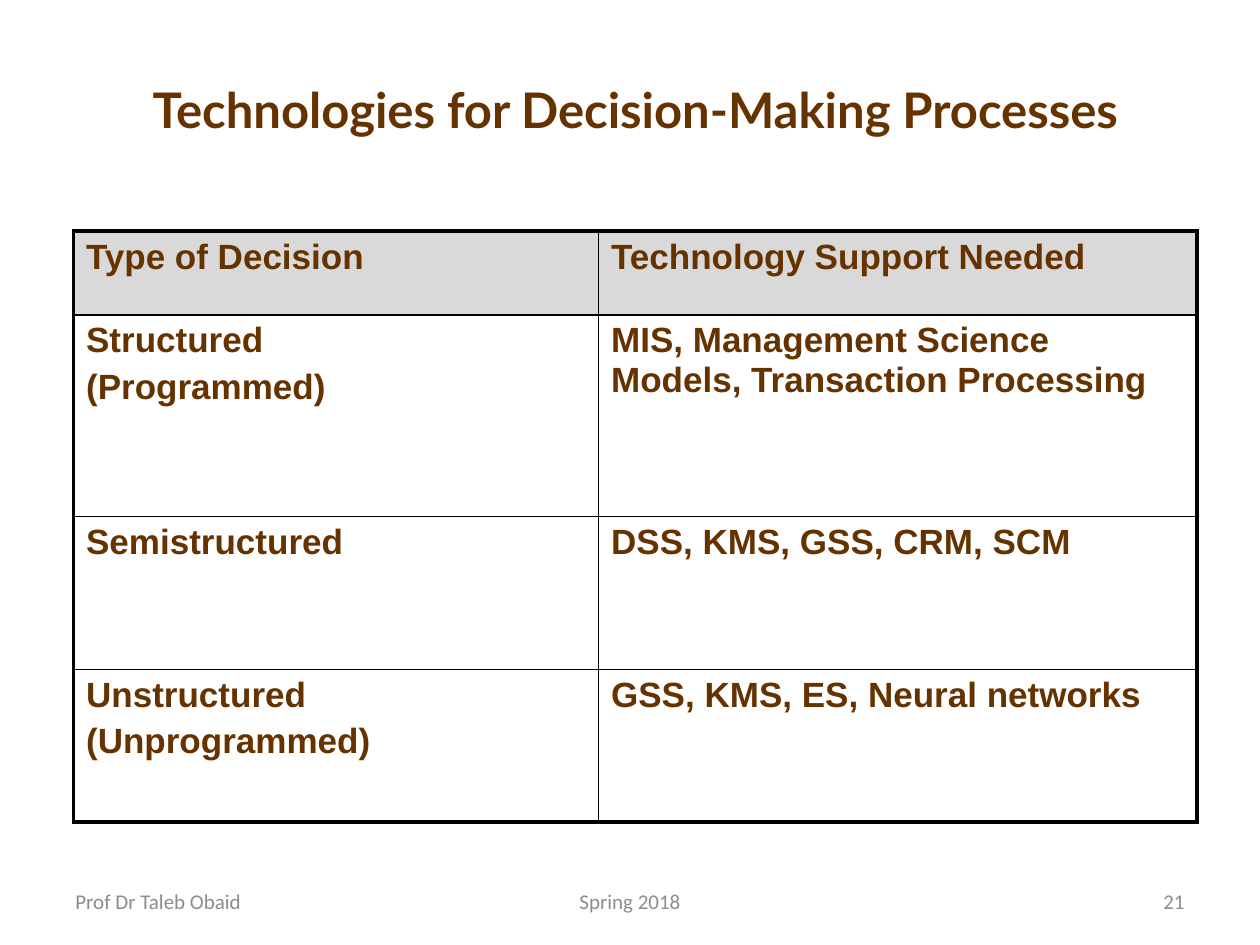
from dataclasses import dataclass

from lxml.etree import SubElement
from pptx import Presentation
from pptx.dml.color import RGBColor
from pptx.enum.text import MSO_ANCHOR, MSO_AUTO_SIZE, PP_ALIGN
from pptx.oxml.ns import qn
from pptx.util import Pt


@dataclass(frozen=True)
class Theme:
    brown: str = "663300"
    header_fill: str = "D9D9D9"
    footer_gray: str = "8C8C8C"
    line: str = "000000"
    title_font: str = "Lato"
    table_font: str = "Arial"
    footer_font: str = "Calibri"
    title_size: float = 28
    table_size: float = 20
    footer_size: float = 12
    outer_line: float = 2.25
    inner_line: float = 1


class SlideBuilder:
    def __init__(self, slide, theme):
        self.slide = slide
        self.theme = theme

    def add_run(self, paragraph, text, font, size, color, bold=False):
        run = paragraph.add_run()
        run.text = text
        run.font.name = font
        run.font.size = Pt(size)
        run.font.bold = bold
        run.font.color.rgb = RGBColor.from_string(color)

    def title(self, text, left, top, width, height):
        shape = self.slide.shapes.title
        shape.left, shape.top = Pt(left), Pt(top)
        shape.width, shape.height = Pt(width), Pt(height)
        frame = shape.text_frame
        frame.auto_size = MSO_AUTO_SIZE.NONE
        frame.vertical_anchor = MSO_ANCHOR.MIDDLE
        paragraph = frame.paragraphs[0]
        paragraph.alignment = PP_ALIGN.CENTER
        theme = self.theme
        self.add_run(paragraph, text, theme.title_font, theme.title_size, theme.brown, True)

    def footer(self, text, left, width, alignment):
        shape = self.slide.shapes.add_textbox(Pt(left), Pt(500.5), Pt(width), Pt(28.75))
        frame = shape.text_frame
        frame.word_wrap = True
        frame.vertical_anchor = MSO_ANCHOR.MIDDLE
        paragraph = frame.paragraphs[0]
        paragraph.alignment = alignment
        theme = self.theme
        self.add_run(paragraph, text, theme.footer_font, theme.footer_size, theme.footer_gray)

    def cell_borders(self, cell, outer_sides):
        """Draw all four borders, heavier on the sides at the table's edge."""
        properties = cell._tc.get_or_add_tcPr()
        for side in "LRTB":
            weight = self.theme.outer_line if side in outer_sides else self.theme.inner_line
            line = SubElement(properties, qn(f"a:ln{side}"), w=str(Pt(weight)))
            fill = SubElement(line, qn("a:solidFill"))
            SubElement(fill, qn("a:srgbClr"), val=self.theme.line)

    def table(self, rows, left, top, column_widths, row_heights):
        theme = self.theme
        row_count, column_count = len(rows), len(column_widths)
        table = self.slide.shapes.add_table(
            row_count, column_count, Pt(left), Pt(top),
            Pt(sum(column_widths)), Pt(sum(row_heights))).table
        table.horz_banding = False
        for column, width in zip(table.columns, column_widths):
            column.width = Pt(width)
        for row, height in zip(table.rows, row_heights):
            row.height = Pt(height)

        for r, row in enumerate(rows):
            for c, lines in enumerate(row):
                cell = table.cell(r, c)
                edges = {"L": c == 0, "R": c == column_count - 1,
                         "T": r == 0, "B": r == row_count - 1}
                self.cell_borders(cell, [side for side, outer in edges.items() if outer])
                if r == 0:
                    cell.fill.solid()
                    cell.fill.fore_color.rgb = RGBColor.from_string(theme.header_fill)
                else:
                    cell.fill.background()
                frame = cell.text_frame
                for index, text in enumerate(lines):
                    paragraph = frame.add_paragraph() if index else frame.paragraphs[0]
                    paragraph.space_before = Pt(theme.table_size * 0.2)
                    self.add_run(paragraph, text, theme.table_font, theme.table_size,
                                 theme.brown, True)


DECISIONS = [
    (["Type of Decision"], ["Technology Support Needed"]),
    (["Structured", "(Programmed)"],
     ["MIS, Management Science Models, Transaction Processing"]),
    (["Semistructured"], ["DSS, KMS, GSS, CRM, SCM"]),
    (["Unstructured", "(Unprogrammed)"], ["GSS, KMS, ES, Neural networks"]),
]


def main():
    presentation = Presentation()
    presentation.slide_width, presentation.slide_height = Pt(720), Pt(540)
    title_only = presentation.slide_layouts[5]
    builder = SlideBuilder(presentation.slides.add_slide(title_only), Theme())
    builder.title("Technologies for Decision-Making Processes", 72, 21.5, 582, 81)
    builder.table(DECISIONS, 42, 132, [300, 342], [48, 115.25, 87.25, 87.25])
    builder.footer("Prof Dr Taleb Obaid", 36, 168, PP_ALIGN.LEFT)
    builder.footer("Spring 2018", 246, 228, PP_ALIGN.CENTER)
    builder.footer("21", 516, 168, PP_ALIGN.RIGHT)
    presentation.save("out.pptx")


if __name__ == "__main__":
    main()
